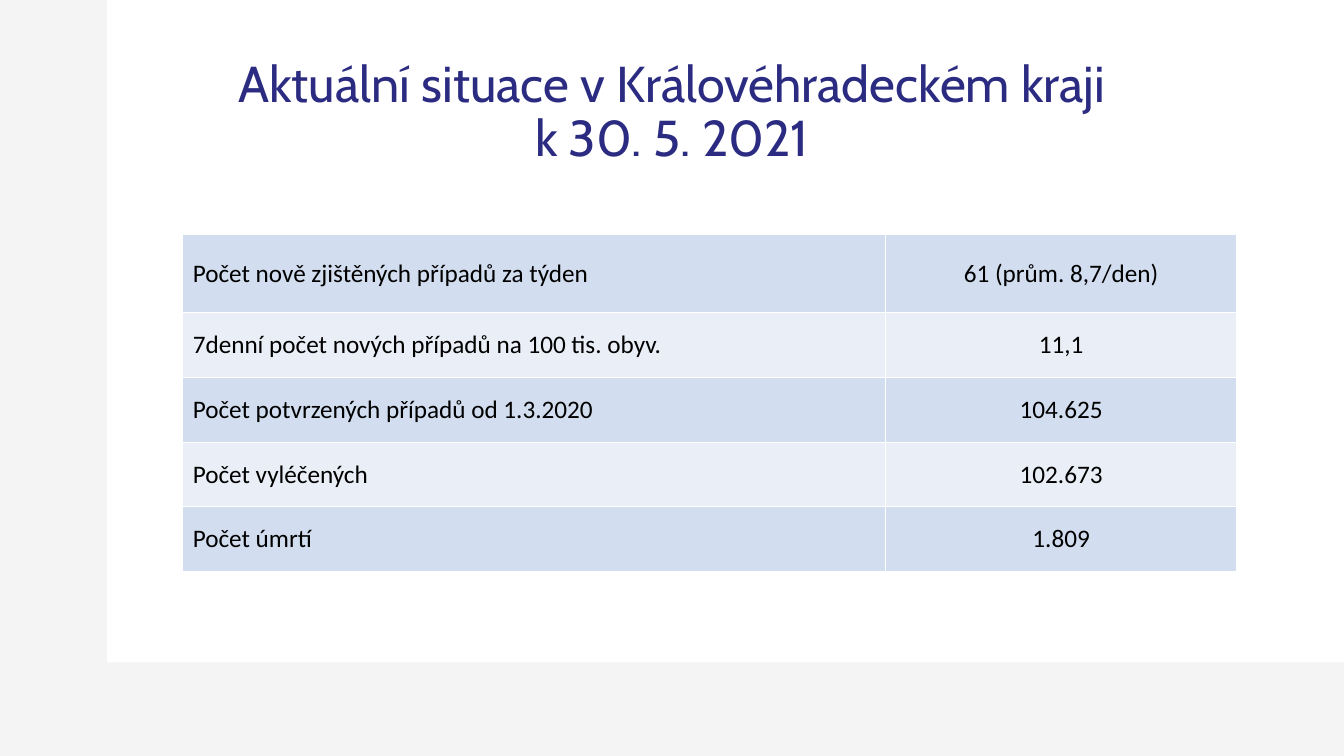
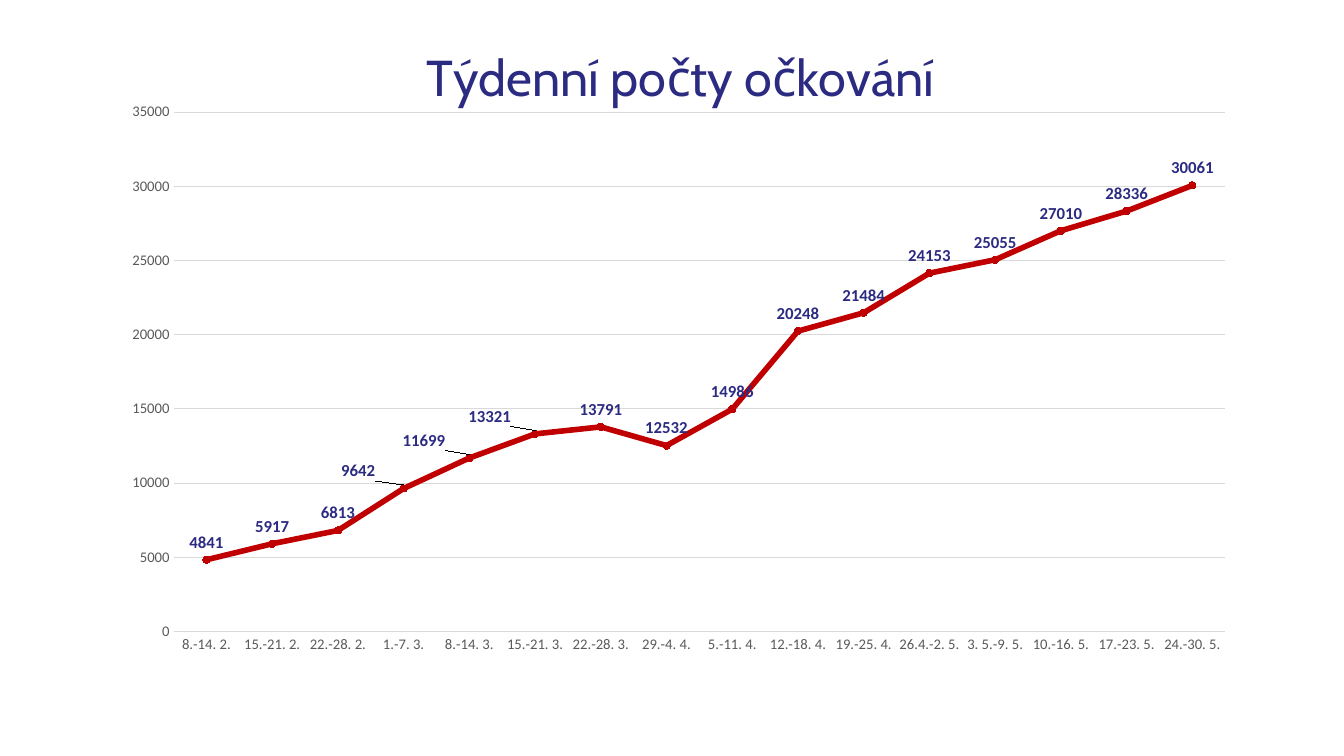
from dataclasses import dataclass

from lxml import etree
from pptx import Presentation
from pptx.chart.data import CategoryChartData
from pptx.dml.color import RGBColor
from pptx.enum import chart as charts, shapes, text
from pptx.oxml import ns
from pptx.util import Pt


@dataclass(frozen=True)
class Theme:
    navy: str = "2B2B82"
    red: str = "C00000"
    black: str = "000000"
    white: str = "FFFFFF"
    backdrop: str = "F4F4F4"
    axis_text: str = "595959"
    grid: str = "D9D9D9"
    bands: tuple = ("D2DEEF", "EAEFF7")
    title_font: str = "Cabin"
    body_font: str = "Calibri"
    title_size: float = 36
    table_size: float = 18
    label_size: float = 12
    axis_size: float = 10.5


THEME = Theme()
TITLE_STYLE = {"name": THEME.title_font, "size": THEME.title_size, "color": THEME.navy, "bold": False}
TABLE_STYLE = {"name": THEME.body_font, "size": THEME.table_size, "color": THEME.black}
AXIS_STYLE = {"name": THEME.body_font, "size": THEME.axis_size, "color": THEME.axis_text}
LABEL_STYLE = {"name": THEME.body_font, "size": THEME.label_size, "color": THEME.navy, "bold": True}

SITUATION_TITLE = "Aktuální situace v Královéhradeckém kraji\vk 30. 5. 2021"
SITUATION = [
    ("Počet nově zjištěných případů za týden", "61 (prům. 8,7/den)"),
    ("7denní počet nových případů na 100 tis. obyv.", "11,1"),
    ("Počet potvrzených případů od 1.3.2020", "104.625"),
    ("Počet vyléčených", "102.673"),
    ("Počet úmrtí", "1.809"),
]
COLUMN_WIDTHS = (502, 251)
FIRST_ROW_HEIGHT, ROW_HEIGHT = 56, 46.2

VACCINATION_TITLE = "Týdenní počty očkování"
VACCINATIONS = [
    ("8.-14. 2.", 4841), ("15.-21. 2.", 5917), ("22.-28. 2.", 6813), ("1.-7. 3.", 9642),
    ("8.-14. 3.", 11699), ("15.-21. 3.", 13321), ("22.-28. 3.", 13791), ("29.-4. 4.", 12532),
    ("5.-11. 4.", 14986), ("12.-18. 4.", 20248), ("19.-25. 4.", 21484), ("26.4.-2. 5.", 24153),
    ("3. 5.-9. 5.", 25055), ("10.-16. 5.", 27010), ("17.-23. 5.", 28336), ("24.-30. 5.", 30061),
]
LEFT_SHIFTED_LABELS = (3, 4, 5)


def box(*lengths):
    return [Pt(length) for length in lengths]


def rgb(value):
    return RGBColor.from_string(value)


def style_font(font, style):
    for name, value in style.items():
        if name == "color":
            font.color.rgb = rgb(value)
        else:
            setattr(font, name, Pt(value) if name == "size" else value)


def paint(fill, color):
    fill.solid()
    fill.fore_color.rgb = rgb(color)


def draw_line(line, color, width):
    line.color.rgb = rgb(color)
    line.width = Pt(width)


def border_cell(cell, color, width):
    properties = cell._tc.get_or_add_tcPr()
    for index, side in enumerate(("a:lnL", "a:lnR", "a:lnT", "a:lnB")):
        line = etree.Element(ns.qn(side), w=str(Pt(width)))
        fill = etree.SubElement(line, ns.qn("a:solidFill"))
        etree.SubElement(fill, ns.qn("a:srgbClr"), val=color)
        properties.insert(index, line)


def set_layout(element, index, **values):
    """Give a chart part a manual layout, as fractions of the chart."""
    for old in element.findall(ns.qn("c:layout")):
        element.remove(old)
    layout = etree.Element(ns.qn("c:layout"))
    manual = etree.SubElement(layout, ns.qn("c:manualLayout"))
    for name, value in values.items():
        etree.SubElement(manual, ns.qn(f"c:{name}"), val=str(value))
    element.insert(index, layout)


def add_situation_slide(presentation):
    slide = presentation.slides.add_slide(presentation.slide_layouts[6])
    paint(slide.background.fill, THEME.backdrop)
    panel = slide.shapes.add_shape(shapes.MSO_SHAPE.RECTANGLE, *box(76.5, 0, 883.5, 473))
    panel.shadow.inherit = False
    paint(panel.fill, THEME.white)
    panel.line.fill.background()

    frame = slide.shapes.add_textbox(*box(66, 29, 828, 104)).text_frame
    frame.word_wrap = True
    frame.vertical_anchor = text.MSO_ANCHOR.MIDDLE
    paragraph = frame.paragraphs[0]
    paragraph.text = SITUATION_TITLE
    paragraph.alignment = text.PP_ALIGN.CENTER
    paragraph.line_spacing = 0.9
    for run in paragraph.runs:
        style_font(run.font, TITLE_STYLE)
    add_situation_table(slide)


def add_situation_table(slide):
    heights = [FIRST_ROW_HEIGHT] + [ROW_HEIGHT] * (len(SITUATION) - 1)
    table = slide.shapes.add_table(
        len(SITUATION), len(COLUMN_WIDTHS), *box(130.5, 167.5, sum(COLUMN_WIDTHS), sum(heights))
    ).table
    table.first_row = table.horz_banding = False
    for column, width in zip(table.columns, COLUMN_WIDTHS):
        column.width = Pt(width)
    alignments = (text.PP_ALIGN.LEFT, text.PP_ALIGN.CENTER)
    for row_index, (row, values) in enumerate(zip(table.rows, SITUATION)):
        row.height = Pt(heights[row_index])
        for cell, value, alignment in zip(row.cells, values, alignments):
            cell.text = value
            cell.vertical_anchor = text.MSO_ANCHOR.MIDDLE
            paint(cell.fill, THEME.bands[row_index % 2])
            border_cell(cell, THEME.white, 1)
            paragraph = cell.text_frame.paragraphs[0]
            paragraph.alignment = alignment
            style_font(paragraph.runs[0].font, TABLE_STYLE)


def add_vaccination_slide(presentation):
    slide = presentation.slides.add_slide(presentation.slide_layouts[6])
    data = CategoryChartData()
    data.categories = [week for week, _ in VACCINATIONS]
    data.add_series("Series 1", [count for _, count in VACCINATIONS])
    chart = slide.shapes.add_chart(
        charts.XL_CHART_TYPE.LINE_MARKERS, *box(78.5, 0, 813, 477), data
    ).chart
    chart.has_legend = False

    paragraph = chart.chart_title.text_frame.paragraphs[0]
    paragraph.text = VACCINATION_TITLE
    style_font(paragraph.runs[0].font, TITLE_STYLE)
    set_layout(chart.chart_title._element, 1, xMode="edge", yMode="edge", x=0.27, y=0.05)
    set_layout(chart._chartSpace.chart.plotArea, 0, layoutTarget="inner",
               xMode="edge", yMode="edge", x=0.056, y=0.168, w=0.924, h=0.778)
    style_axes(chart)
    style_series(chart.plots[0].series[0])


def style_axes(chart):
    for axis in (chart.category_axis, chart.value_axis):
        axis.major_tick_mark = axis.minor_tick_mark = charts.XL_TICK_MARK.NONE
        style_font(axis.tick_labels.font, AXIS_STYLE)
        axis._element.txPr.bodyPr.set("rot", "-60000000")
    draw_line(chart.category_axis.format.line, THEME.grid, 0.75)
    values = chart.value_axis
    values.format.line.fill.background()
    values.minimum_scale, values.maximum_scale, values.major_unit = 0, 35000, 5000
    draw_line(values.major_gridlines.format.line, THEME.grid, 0.75)


def style_series(series):
    series.smooth = False
    draw_line(series.format.line, THEME.red, 4)
    series.marker.style = charts.XL_MARKER_STYLE.CIRCLE
    series.marker.size = 5
    paint(series.marker.format.fill, THEME.red)
    draw_line(series.marker.format.line, THEME.red, 0.75)

    labels = series.data_labels
    labels.show_value = True
    shifted = [series.points[index].data_label for index in LEFT_SHIFTED_LABELS]
    for label in [labels, *shifted]:
        label.position = charts.XL_LABEL_POSITION.ABOVE
        style_font(label.font, LABEL_STYLE)
    for label in labels._element.findall(ns.qn("c:dLbl")):
        set_layout(label, 1, x=-0.04, y=0)


def main():
    presentation = Presentation()
    presentation.slide_width, presentation.slide_height = box(960, 540)
    add_situation_slide(presentation)
    add_vaccination_slide(presentation)
    presentation.save("out.pptx")


if __name__ == "__main__":
    main()
